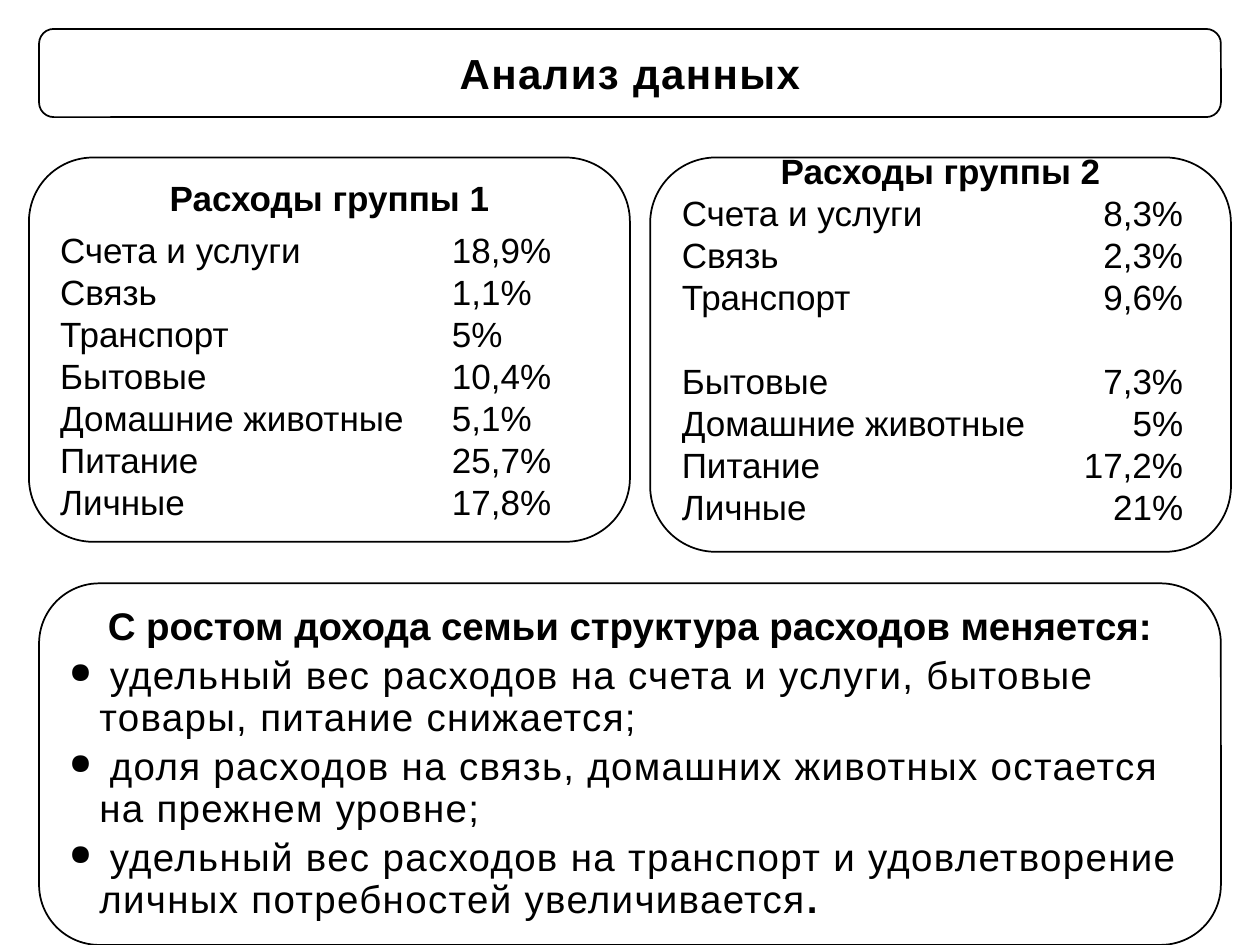
from dataclasses import dataclass
from typing import Any

from lxml import etree
from pptx import Presentation, util as u
from pptx.dml.color import RGBColor
from pptx.enum import shapes, text
from pptx.oxml.ns import qn

COLS, ROWS = 100, 75  # grid over the slide
CELL = u.Inches(10) // COLS
BLACK, WHITE = "000000", "FFFFFF"
FONT = "Arial"
MID = text.PP_ALIGN.CENTER
LEFT = text.PP_ALIGN.LEFT


@dataclass
class Box:
    col: float
    row: float
    wide: float
    high: float


@dataclass
class Group:
    box: Box
    title: str
    rows: list[tuple[str, str]]
    tab: float  # tab stop in columns
    side: str  # tab alignment
    after: float = 0  # points below the title
    gap: str = ""  # row with a line of space above it
    foot: float = 0.5  # bottom inset in rows


GROUPS = [
    Group(Box(2.3, 12.5, 47.7, 30.5), "Расходы группы 1", [
        ("Счета и услуги", "18,9%"), ("Связь", "1,1%"),
        ("Транспорт", "5%"), ("Бытовые", "10,4%"),
        ("Домашние животные", "5,1%"), ("Питание", "25,7%"),
        ("Личные", "17,8%")], tab=31.1, side="l", after=6),
    Group(Box(51.6, 12.5, 46.1, 31.3), "Расходы группы 2", [
        ("Счета и услуги", "8,3%"), ("Связь", "2,3%"),
        ("Транспорт", "9,6%"), ("Бытовые", "7,3%"),
        ("Домашние животные", "5%"), ("Питание", "17,2%"),
        ("Личные", "21%")], tab=39.8, side="r", gap="Бытовые", foot=3),
]
POINTS = [
    ("удельный вес расходов на счета и услуги, бытовые товары, "
     "питание снижается;", ""),
    ("доля расходов на связь, домашних животных остается "
     "на прежнем уровне;", ""),
    ("удельный вес расходов на транспорт и удовлетворение "
     "личных потребностей увеличивается", "."),
]


def hue(code: str) -> RGBColor:
    return RGBColor.from_string(code)


def span(cells: float) -> int:
    return round(cells * CELL)


def panel(slide: Any, box: Box, foot: float = 0.5) -> Any:
    """Draw a rounded panel and return its text frame."""
    shape = slide.shapes.add_shape(
        shapes.MSO_SHAPE.ROUNDED_RECTANGLE,
        span(box.col), span(box.row), span(box.wide), span(box.high))
    shape.shadow.inherit = False
    shape.fill.solid()
    shape.fill.fore_color.rgb = hue(WHITE)
    shape.line.color.rgb = hue(BLACK)
    shape.line.width = u.Pt(1)
    frame = shape.text_frame
    frame.word_wrap = True
    frame.vertical_anchor = text.MSO_ANCHOR.MIDDLE
    frame.margin_bottom = span(foot)
    return frame


def para(frame: Any, align: Any) -> Any:
    """Use the first paragraph while it is empty, then add more."""
    first = frame.paragraphs[0]
    item = frame.add_paragraph() if first.runs else first
    item.alignment = align
    return item


def write(item: Any, words: str, size: float, bold: bool = False,
          track: float = 0) -> None:
    run = item.add_run()
    run.text = words
    run.font.name = FONT
    run.font.size = u.Pt(size)
    run.font.bold = bold
    run.font.color.rgb = hue(BLACK)
    if track:
        run.font._element.set("spc", str(round(track * 100)))


def stop(item: Any, cells: float, side: str) -> None:
    tabs = etree.SubElement(item._p.get_or_add_pPr(), qn("a:tabLst"))
    etree.SubElement(tabs, qn("a:tab"), pos=str(span(cells)), algn=side)


def bullet(item: Any, cells: float) -> None:
    props = item._p.get_or_add_pPr()
    props.set("marL", str(span(cells)))
    props.set("indent", str(-span(cells)))
    tint = etree.SubElement(props, qn("a:buClr"))
    etree.SubElement(tint, qn("a:srgbClr"), val=BLACK)
    etree.SubElement(props, qn("a:buSzPct"), val="75000")
    etree.SubElement(props, qn("a:buChar"), char="●")


def spread(item: Any) -> None:
    item.line_spacing = 0.9
    item.space_before = u.Pt(4.5)


def costs(slide: Any, group: Group) -> None:
    frame = panel(slide, group.box, group.foot)
    head = para(frame, MID)
    head.space_after = u.Pt(group.after)
    write(head, group.title, 20, bold=True)
    for name, share in group.rows:
        item = para(frame, LEFT)
        if name == group.gap:
            item.space_before = u.Pt(24)
        stop(item, group.tab, group.side)
        write(item, f"{name}\t{share}", 20)


def result(slide: Any) -> None:
    frame = panel(slide, Box(3.1, 46.3, 93.8, 28.7))
    head = para(frame, MID)
    spread(head)
    write(head, "С ростом дохода семьи структура расходов меняется:",
          22, bold=True)
    for words, end in POINTS:
        item = para(frame, LEFT)
        spread(item)
        bullet(item, 2.4)
        write(item, " ", 22, bold=True)
        write(item, words, 22, track=0.8)
        if end:
            write(item, end, 22, bold=True, track=0.8)


def main() -> None:
    deck = Presentation()
    deck.slide_width, deck.slide_height = span(COLS), span(ROWS)
    slide = deck.slides.add_slide(deck.slide_layouts[6])

    # Title
    frame = panel(slide, Box(3.1, 2.3, 93.8, 7))
    write(para(frame, MID), "Анализ данных", 24, bold=True, track=0.8)

    # Spending of both groups
    for group in GROUPS:
        costs(slide, group)

    # Conclusions
    result(slide)
    deck.save("out.pptx")


if __name__ == "__main__":
    main()
